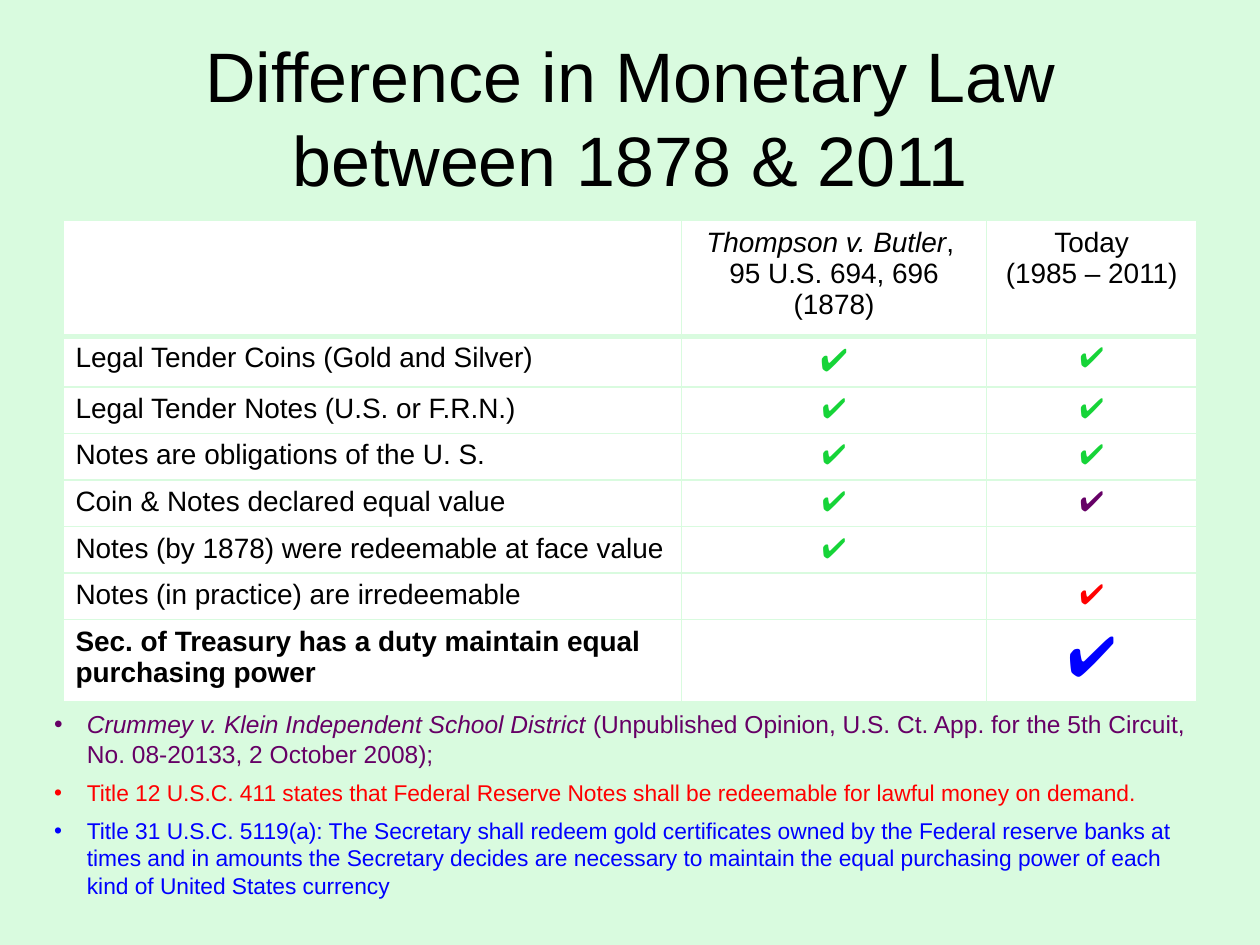
from dataclasses import dataclass

from lxml.etree import SubElement
from pptx import Presentation
from pptx.dml.color import RGBColor
from pptx.enum.text import MSO_ANCHOR, MSO_AUTO_SIZE, PP_ALIGN
from pptx.oxml import parse_xml
from pptx.oxml.ns import nsdecls, qn
from pptx.util import Inches, Pt


@dataclass(frozen=True)
class Theme:
    font: str = "Arial"
    background: str = "D9FBDF"
    cell: str = "FFFFFF"
    text: str = "000000"
    green: str = "16D438"
    purple: str = "660066"
    red: str = "FF0000"
    blue: str = "0000FF"
    title_size: int = 40
    table_size: int = 16
    first_check_size: int = 18
    key_check_size: int = 32
    case_size: int = 14
    statute_size: int = 13


theme = Theme()


def set_font(p, size, color):
    p.font.name = theme.font
    p.font.size = Pt(size)
    p.font.color.rgb = RGBColor.from_string(color)


def set_borders(cell, bottom_width):
    """Draw the cell's four borders in the background colour."""
    widths = {"lnL": 1, "lnR": 1, "lnT": 1, "lnB": bottom_width}
    tc_pr = cell._tc.get_or_add_tcPr()
    for i, (side, width) in enumerate(widths.items()):
        tc_pr.insert(i, parse_xml(
            f'<a:{side} {nsdecls("a")} w="{Pt(width)}"><a:solidFill>'
            f'<a:srgbClr val="{theme.background}"/></a:solidFill></a:{side}>'))


prs = Presentation()
prs.slide_width, prs.slide_height = Inches(10), Inches(7.5)
s = prs.slides.add_slide(prs.slide_layouts[1])
s.background.fill.solid()
s.background.fill.fore_color.rgb = RGBColor.from_string(theme.background)

# Title
title = s.shapes.title
title.left, title.top = Inches(0.5), Inches(0.3)
title.width, title.height = Inches(9), Inches(1.25)
tf = title.text_frame
tf.text = "Difference in Monetary Law between 1878 & 2011"
tf.vertical_anchor = MSO_ANCHOR.MIDDLE
tf.auto_size = MSO_AUTO_SIZE.NONE
tf.paragraphs[0].alignment = PP_ALIGN.CENTER
set_font(tf.paragraphs[0], theme.title_size, theme.text)

# Comparison table: label, then the check colour for 1878 and for today
comparison = [
    ("Legal Tender Coins (Gold and Silver)", theme.green, theme.green),
    ("Legal Tender Notes (U.S. or F.R.N.)", theme.green, theme.green),
    ("Notes are obligations of the U. S.", theme.green, theme.green),
    ("Coin & Notes declared equal value", theme.green, theme.purple),
    ("Notes (by 1878) were redeemable at face value", theme.green, None),
    ("Notes (in practice) are irredeemable", None, theme.red),
    ("Sec. of Treasury has a duty maintain equal purchasing power", None, theme.blue),
]
check_sizes = {(1, 1): theme.first_check_size, (7, 2): theme.key_check_size}
col_widths = [4.91, 2.42, 1.67]
row_heights = [0.92, 0.4] + [0.37] * 5 + [0.65]

table = s.shapes.add_table(len(row_heights), len(col_widths), Inches(0.5), Inches(1.75),
                           Inches(sum(col_widths)), Inches(sum(row_heights))).table
table.first_row = table.horz_banding = False
for column, width in zip(table.columns, col_widths):
    column.width = Inches(width)
for row, height in zip(table.rows, row_heights):
    row.height = Inches(height)

p = table.cell(0, 1).text_frame.paragraphs[0]
r = p.add_run()
r.text = "Thompson v. Butler"
r.font.italic = True
p.add_run().text = ", "
p.add_line_break()
p.add_run().text = "95 U.S. 694, 696 (1878)"
table.cell(0, 2).text_frame.text = "Today\v(1985 – 2011)"

for i, row in enumerate(table.rows):
    for j, cell in enumerate(row.cells):
        cell.fill.solid()
        cell.fill.fore_color.rgb = RGBColor.from_string(theme.cell)
        set_borders(cell, 3 if i == 0 else 1)
        p = cell.text_frame.paragraphs[0]
        color = theme.text
        if i > 0 and j == 0:
            p.add_run().text = comparison[i - 1][0]
        elif i > 0 and comparison[i - 1][j]:
            p.add_run().text = "✔"
            color = comparison[i - 1][j]
        if j > 0:
            p.alignment = PP_ALIGN.CENTER
        size = check_sizes.get((i, j), theme.table_size)
        set_font(p, size, color)
        if not p.runs:
            SubElement(p._p, qn("a:endParaRPr"), sz=str(size * 100))
table.cell(7, 0).text_frame.paragraphs[0].font.bold = True

# Sources: italic lead, rest of the text, size and colour
sources = [
    ("Crummey v. Klein Independent School District",
     " (Unpublished Opinion, U.S. Ct. App. for the 5th Circuit, No. 08-20133, 2 October 2008);",
     theme.case_size, theme.purple),
    ("", "Title 12 U.S.C. 411 states that Federal Reserve Notes shall be redeemable "
     "for lawful money on demand.", theme.statute_size, theme.red),
    ("", "Title 31 U.S.C. 5119(a): The Secretary shall redeem gold certificates owned by "
     "the Federal reserve banks at times and in amounts the Secretary decides are necessary "
     "to maintain the equal purchasing power of each kind of United States currency",
     theme.statute_size, theme.blue),
]
body = s.placeholders[1]
body.left, body.top = Inches(0.33), Inches(5.58)
body.width, body.height = Inches(9.33), Inches(1.6)
tf = body.text_frame
tf.auto_size = MSO_AUTO_SIZE.NONE
for i, (lead, text, size, color) in enumerate(sources):
    p = tf.paragraphs[0] if i == 0 else tf.add_paragraph()
    if lead:
        r = p.add_run()
        r.text = lead
        r.font.italic = True
    p.add_run().text = text
    p.space_before, p.space_after = Pt(0), Pt(6)
    set_font(p, size, color)
    p_pr = p._p.get_or_add_pPr()
    p_pr.set("marL", str(Inches(0.26)))
    p_pr.set("indent", str(-Inches(0.26)))

prs.save("out.pptx")
